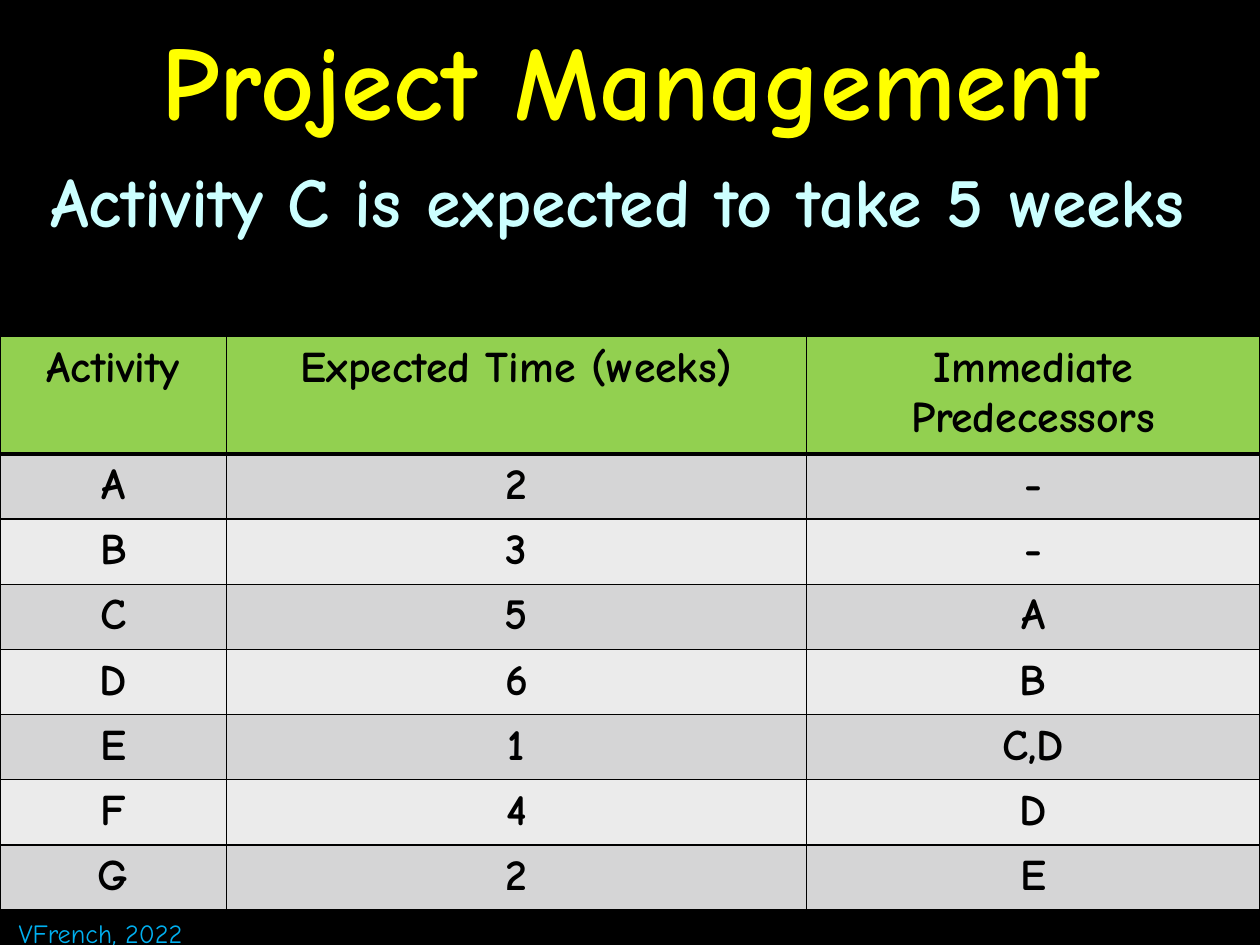
from lxml.etree import SubElement as Sub
from pptx import Presentation
from pptx.dml.color import RGBColor as Rgb
from pptx.enum.text import MSO_ANCHOR as Anc, PP_ALIGN as Al
from pptx.oxml.ns import qn
from pptx.util import Inches, Pt

WIDE, HIGH = 10, 7.5
FONT = "Comic Neue"
HUES = {
    "back": "000000", "title": "FFFF00", "lead": "CCFFFF", "head": "92D050",
    "odd": "D5D5D6", "even": "EBEBEB", "ink": "000000", "note": "00B0F0",
}
COLS = [0.18, 0.46, 0.36]
ROWS = [
    ("Activity", "Expected Time (weeks)", "Immediate\nPredecessors"),
    ("A", "2", "-"),
    ("B", "3", "-"),
    ("C", "5", "A"),
    ("D", "6", "B"),
    ("E", "1", "C,D"),
    ("F", "4", "D"),
    ("G", "2", "E"),
]


def paint(fill, hue):
    """Give a fill one solid colour."""
    fill.solid()
    fill.fore_color.rgb = Rgb.from_string(HUES[hue])


def write(frame, text, size, hue, bold=True, align=Al.LEFT, gap=0):
    """Put formatted lines of text into a text frame."""
    frame.text = text
    for para in frame.paragraphs:
        para.alignment = align
        para.space_before = Pt(gap)
        font = para.runs[0].font
        font.name, font.size, font.bold = FONT, Pt(size), bold
        font.color.rgb = Rgb.from_string(HUES[hue])


def label(slide, box, text, anchor=Anc.TOP, **form):
    """Add a text box placed by shares of the slide."""
    left, top, wide, high = box
    shape = slide.shapes.add_textbox(
        Inches(left * WIDE), Inches(top * HIGH),
        Inches(wide * WIDE), Inches(high * HIGH))
    frame = shape.text_frame
    frame.word_wrap = True
    frame.vertical_anchor = anchor
    write(frame, text, **form)


def edge(cell, widths):
    """Draw the left, right, top and bottom borders of a cell."""
    props = cell._tc.get_or_add_tcPr()
    for spot, (side, width) in enumerate(zip("LRTB", widths)):
        line = Sub(props, qn(f"a:ln{side}"), w=str(Pt(width)))
        Sub(Sub(line, qn("a:solidFill")), qn("a:srgbClr"), val=HUES["ink"])
        props.insert(spot, line)


def grid(slide, top, head, step):
    """Add the activity table across the whole slide."""
    high = head + step * (len(ROWS) - 1)
    table = slide.shapes.add_table(
        len(ROWS), len(COLS), 0, Inches(top), Inches(WIDE), Inches(high)).table
    table.horz_banding = False
    for col, share in zip(table.columns, COLS):
        col.width = Inches(share * WIDE)
    for r, texts in enumerate(ROWS):
        table.rows[r].height = Inches(step if r else head)
        hue = ("even", "odd")[r % 2] if r else "head"
        for c, text in enumerate(texts):
            cell = table.cell(r, c)
            write(cell.text_frame, text, 25, "ink", align=Al.CENTER)
            paint(cell.fill, hue)
            edge(cell, (1, 1, 3 if r == 1 else 1, 1 if r else 3))


def main():
    """Build the slide and save it."""
    deck = Presentation()
    deck.slide_width, deck.slide_height = Inches(WIDE), Inches(HIGH)
    slide = deck.slides.add_slide(deck.slide_layouts[6])
    paint(slide.background.fill, "back")
    label(slide, (0, 0, 1, 1 / 6), "Project Management", Anc.MIDDLE,
          size=60, hue="title", align=Al.CENTER)
    label(slide, (0.03, 0.16, 0.96, 0.82),
          "Activity C is expected to take 5 weeks",
          size=40, hue="lead", gap=8)
    grid(slide, 2.67, 0.89, 0.5)
    label(slide, (0.005, 0.964, 0.17, 0.05), "VFrench, 2022",
          size=15, hue="note", bold=False)
    deck.save("out.pptx")


if __name__ == "__main__":
    main()
